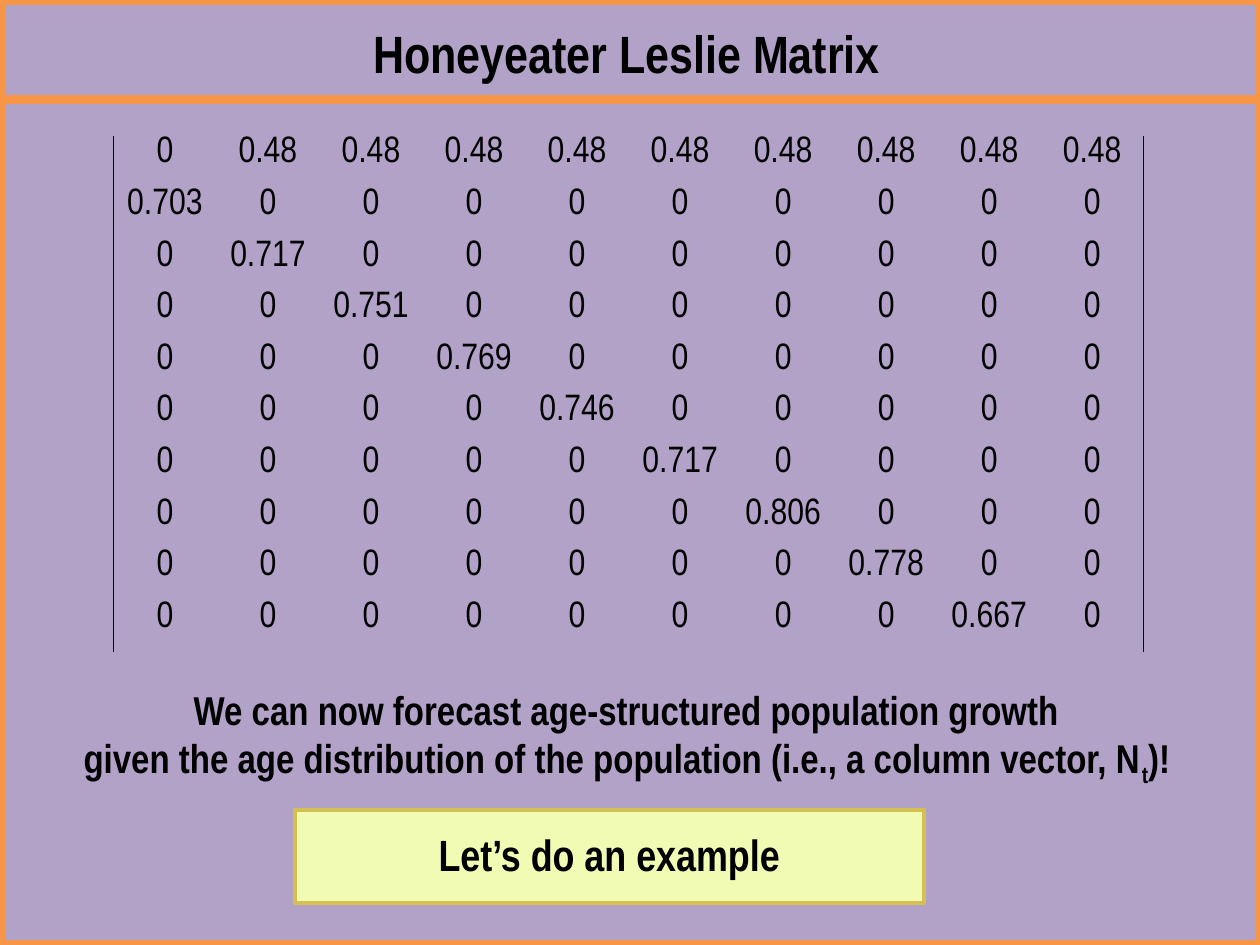
from dataclasses import dataclass

from lxml.etree import SubElement
from pptx import Presentation
from pptx.dml.color import RGBColor
from pptx.enum.shapes import MSO_CONNECTOR as CONN, MSO_SHAPE as SHAPE
from pptx.enum.text import MSO_ANCHOR as ANCHOR, PP_ALIGN as ALIGN
from pptx.oxml.ns import qn
from pptx.util import Inches, Pt

FONT = "Arial Narrow"
BLACK = "000000"
ORANGE = "F79646"
FECUNDITY = "0.48"
SURVIVAL = ["0.703", "0.717", "0.751", "0.769", "0.746",
            "0.717", "0.806", "0.778", "0.667"]


@dataclass
class Box:
    left: float
    top: float
    width: float
    height: float

    def emu(self) -> tuple:
        return tuple(Inches(v) for v in (self.left, self.top, self.width, self.height))


@dataclass
class Label:
    box: Box
    size: float
    lines: list


LABELS = [
    Label(Box(0.74, 0.12, 8.47, 0.61), 30, [["Honeyeater Leslie Matrix"]]),
    Label(Box(3, 6.52, 3.67, 0.52), 25, [["Let’s do an example"]]),
    Label(Box(0.25, 5.39, 9.45, 0.88), 23, [
        ["We can now forecast age-structured population growth"],
        ["given the age distribution of the population (i.e., a column vector, N",
         "t", ")!"],
    ]),
]


def rgb(value: str) -> RGBColor:
    return RGBColor.from_string(value)


def add_text(p, text: str, *, size: float, bold: bool = False,
             color: str = BLACK, baseline: int = 0) -> None:
    p.alignment = ALIGN.CENTER
    r = p.add_run()
    r.text = text
    r.font.name = FONT
    r.font.size = Pt(size)
    r.font.bold = bold
    r.font.color.rgb = rgb(color)
    if baseline:
        r.font._element.set("baseline", str(baseline * 1000))


def add_rect(s, box: Box, line: str, width: float, fill: str = "") -> None:
    sp = s.shapes.add_shape(SHAPE.RECTANGLE, *box.emu())
    sp.shadow.inherit = False
    sp.line.color.rgb = rgb(line)
    sp.line.width = Pt(width)
    if fill:
        sp.fill.solid()
        sp.fill.fore_color.rgb = rgb(fill)
    else:
        sp.fill.background()


def add_rule(s, y: float) -> None:
    cn = s.shapes.add_connector(CONN.STRAIGHT, Inches(0), Inches(y), Inches(10), Inches(y))
    cn.line.color.rgb = rgb(ORANGE)
    cn.line.width = Pt(5)
    SubElement(cn._element.spPr, qn("a:effectLst"))


def add_label(s, label: Label) -> None:
    tf = s.shapes.add_textbox(*label.box.emu()).text_frame
    tf.word_wrap = True
    for i, line in enumerate(label.lines):
        p = tf.add_paragraph() if i else tf.paragraphs[0]
        for j, text in enumerate(line):
            add_text(p, text, size=label.size, bold=True, baseline=-25 if j == 1 else 0)


def set_borders(cell, visible: str) -> None:
    tc_pr = cell._tc.get_or_add_tcPr()
    for i, side in enumerate(("L", "R", "T", "B")):
        ln = SubElement(tc_pr, qn(f"a:ln{side}"), w=str(Pt(1)))
        if side == visible:
            fill = SubElement(ln, qn("a:solidFill"))
            SubElement(fill, qn("a:srgbClr"), val=BLACK)
        else:
            SubElement(ln, qn("a:noFill"))


def leslie_value(row: int, col: int) -> str:
    if row == 0 and col > 0:
        return FECUNDITY
    return SURVIVAL[col] if row == col + 1 else "0"


def add_matrix(s, box: Box) -> None:
    n = len(SURVIVAL) + 1
    table = s.shapes.add_table(n, n, *box.emu()).table
    table.first_row = table.horz_banding = False
    for row in range(n):
        table.rows[row].height = Inches(box.height / n)
        table.columns[row].width = Inches(box.width / n)
        for col in range(n):
            cell = table.cell(row, col)
            cell.margin_left = cell.margin_right = Inches(0.03)
            cell.margin_top = cell.margin_bottom = Inches(0)
            cell.vertical_anchor = ANCHOR.TOP
            set_borders(cell, {0: "L", n - 1: "R"}.get(col, ""))
            cell.fill.background()
            add_text(cell.text_frame.paragraphs[0], leslie_value(row, col), size=21)


def main() -> None:
    prs = Presentation()
    prs.slide_width, prs.slide_height = Inches(10), Inches(7.5)
    s = prs.slides.add_slide(prs.slide_layouts[6])
    s.background.fill.solid()
    s.background.fill.fore_color.rgb = rgb("B3A2C7")
    title, example, forecast = LABELS
    add_rect(s, Box(0, 0, 10, 7.5), ORANGE, 6)
    add_rule(s, 0.79)
    add_label(s, title)
    add_rect(s, Box(2.34, 6.43, 4.99, 0.74), "D3C051", 2.25, "F1FBB3")
    add_label(s, example)
    add_matrix(s, Box(0.9, 1.08, 8.18, 4.1))
    add_label(s, forecast)
    prs.save("out.pptx")


if __name__ == "__main__":
    main()
